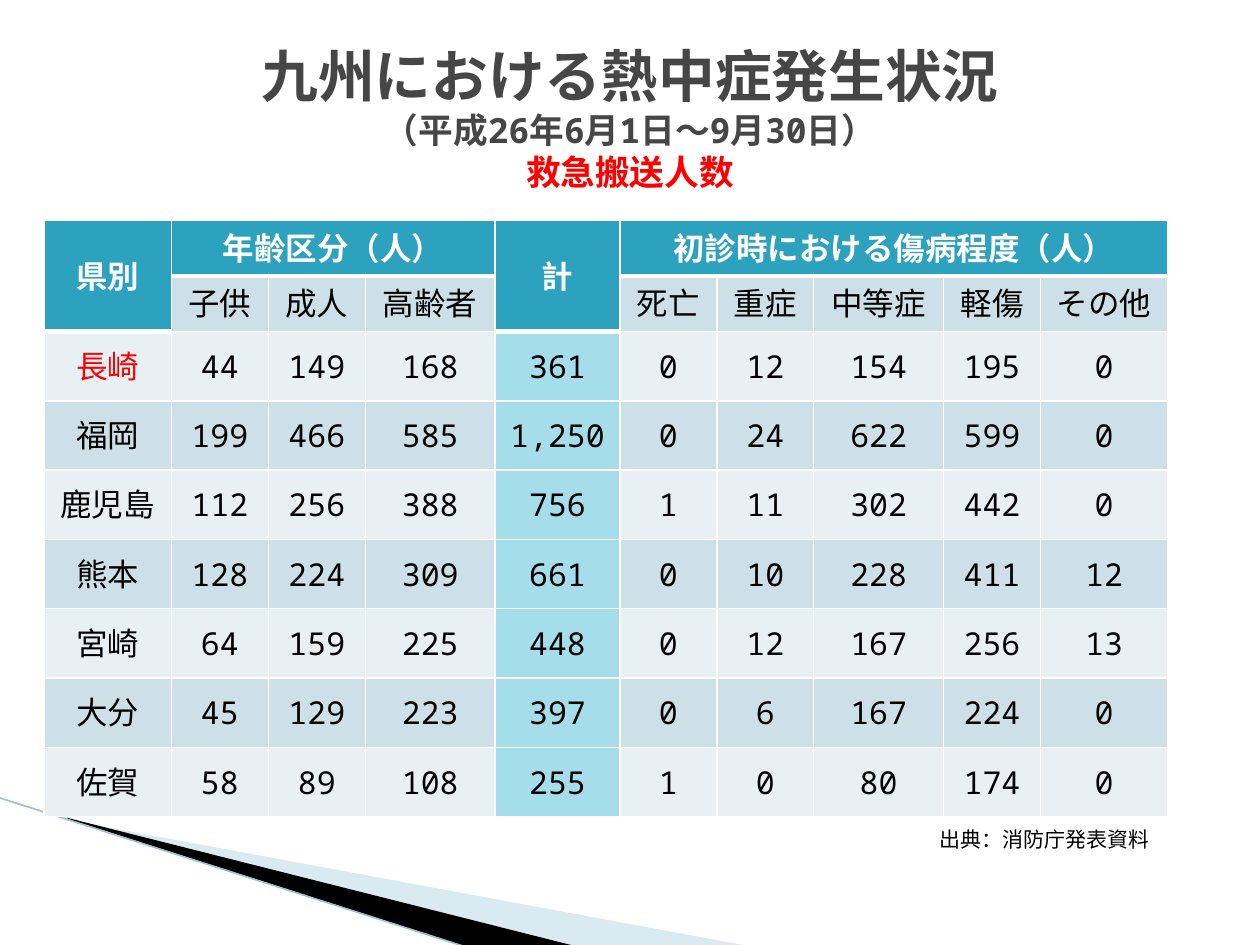
"""Build a slide tabulating heatstroke cases in Kyushu by prefecture."""
from lxml.etree import SubElement
from pptx import Presentation
from pptx.dml.color import RGBColor
from pptx.enum.text import MSO_ANCHOR, MSO_AUTO_SIZE, PP_ALIGN
from pptx.oxml.ns import qn
from pptx.util import Inches, Pt

COLORS = {
    "white": "FFFFFF", "black": "000000", "red": "FF0000", "title": "464646",
    "header": "2DA2BF", "total": "A6DDEA", "dark_band": "CDE0E8",
    "light_band": "E8F0F4", "wedge": "A0CBDC", "line": "97C5D8",
}
FONT = "Noto Sans Mono"


def write(para, text, size=18, color="black", bold=False):
    """Add one formatted run to a paragraph."""
    span = para.add_run()
    span.text = text
    span.font.name = FONT
    span.font.size = Pt(size)
    span.font.bold = bold
    span.font.color.rgb = RGBColor.from_string(COLORS[color])
    SubElement(span.font._element, qn("a:ea"), typeface=FONT)


def add_border(cell, side, width):
    """Draw one white edge of a table cell."""
    edge = SubElement(cell._tc.get_or_add_tcPr(), qn(f"a:ln{side}"), w=str(Pt(width)))
    fill = SubElement(edge, qn("a:solidFill"))
    SubElement(fill, qn("a:srgbClr"), val=COLORS["white"])


deck = Presentation()
deck.slide_width, deck.slide_height = Inches(10), Inches(7.5)
page = deck.slides.add_slide(deck.slide_layouts[5])

wedges = [
    ("wedge", [(0.55, 6.51), (5.95, 7.51), (4.56, 7.51), (0.55, 6.5)]),
    ("black", [(0.53, 6.49), (4.57, 7.51), (3.72, 7.52), (0.54, 6.5)]),
]
for color, points in wedges:
    corners = [(Inches(x), Inches(y)) for x, y in points]
    builder = page.shapes.build_freeform(*corners[0])
    builder.add_line_segments(corners[1:])
    wedge = builder.convert_to_shape()
    wedge.shadow.inherit = False
    wedge.fill.solid()
    wedge.fill.fore_color.rgb = RGBColor.from_string(COLORS[color])
    wedge.line.fill.background()
    if color == "wedge":
        tint = wedge._element.spPr.find(".//" + qn("a:srgbClr"))
        SubElement(tint, qn("a:alpha"), val="40000")

line = page.shapes.add_connector(1, Inches(-0.01), Inches(6.33), Inches(3.71), Inches(7.52))
line.line.color.rgb = RGBColor.from_string(COLORS["line"])
line.line.width = Pt(0.95)
SubElement(line._element.spPr, qn("a:effectLst"))

title = page.shapes.title
title.left, title.top, title.width, title.height = map(Inches, (0.5, 0.3, 9, 1.25))
title.text_frame.auto_size = MSO_AUTO_SIZE.NONE
title.text_frame.vertical_anchor = MSO_ANCHOR.MIDDLE
para = title.text_frame.paragraphs[0]
para.alignment = PP_ALIGN.CENTER
write(para, "九州における熱中症発生状況", size=32.4, color="title", bold=True)
para.add_line_break()
write(para, "（平成26年6月1日～9月30日）", size=19.8, color="title", bold=True)
para.add_line_break()
write(para, "救急搬送人数", size=19.8, color="red", bold=True)

rows = [
    ["県別", "年齢区分（人）", "", "", "計", "初診時における傷病程度（人）", "", "", "", ""],
    ["", "子供", "成人", "高齢者", "", "死亡", "重症", "中等症", "軽傷", "その他"],
    ["長崎", 44, 149, 168, 361, 0, 12, 154, 195, 0],
    ["福岡", 199, 466, 585, 1250, 0, 24, 622, 599, 0],
    ["鹿児島", 112, 256, 388, 756, 1, 11, 302, 442, 0],
    ["熊本", 128, 224, 309, 661, 0, 10, 228, 411, 12],
    ["宮崎", 64, 159, 225, 448, 0, 12, 167, 256, 13],
    ["大分", 45, 129, 223, 397, 0, 6, 167, 224, 0],
    ["佐賀", 58, 89, 108, 255, 1, 0, 80, 174, 0],
]
widths = [1.01, 0.77, 0.77, 1.03, 0.99, 0.77, 0.77, 1.03, 0.77, 1.01]
heights = [0.41] * 2 + [0.55] * 7
tall_columns = (0, 4)
table = page.shapes.add_table(
    len(rows), len(widths), Inches(0.35), Inches(1.75), Inches(8.93), Inches(4.68)
).table
for column, width in zip(table.columns, widths):
    column.width = Inches(width)
for row, height in zip(table.rows, heights):
    row.height = Inches(height)

for r, values in enumerate(rows):
    for c, value in enumerate(values):
        cell = table.cell(r, c)
        is_header = r == 0 or (r == 1 and c in tall_columns)
        for side in "LRTB":
            add_border(cell, side, 3 if is_header and side == "B" else 1)
        if is_header:
            fill = "header"
        elif c == 4:
            fill = "total"
        else:
            fill = "dark_band" if r % 2 else "light_band"
        cell.fill.solid()
        cell.fill.fore_color.rgb = RGBColor.from_string(COLORS[fill])
        if r > 1 or c in tall_columns:
            cell.vertical_anchor = MSO_ANCHOR.MIDDLE
        if value == "":
            continue
        para = cell.text_frame.paragraphs[0]
        para.alignment = PP_ALIGN.CENTER
        text = value if isinstance(value, str) else f"{value:,}"
        color = "white" if is_header else "red" if value == "長崎" else "black"
        write(para, text, color=color, bold=is_header)

for first, last in [((0, 0), (1, 0)), ((0, 1), (0, 3)), ((0, 4), (1, 4)), ((0, 5), (0, 9))]:
    table.cell(*first).merge(table.cell(*last))

source = page.shapes.add_textbox(Inches(7.36), Inches(6.51), Inches(2.13), Inches(0.3))
source.text_frame.word_wrap = True
source.text_frame.auto_size = MSO_AUTO_SIZE.SHAPE_TO_FIT_TEXT
write(source.text_frame.paragraphs[0], "出典：消防庁発表資料", size=12)

deck.save("out.pptx")
